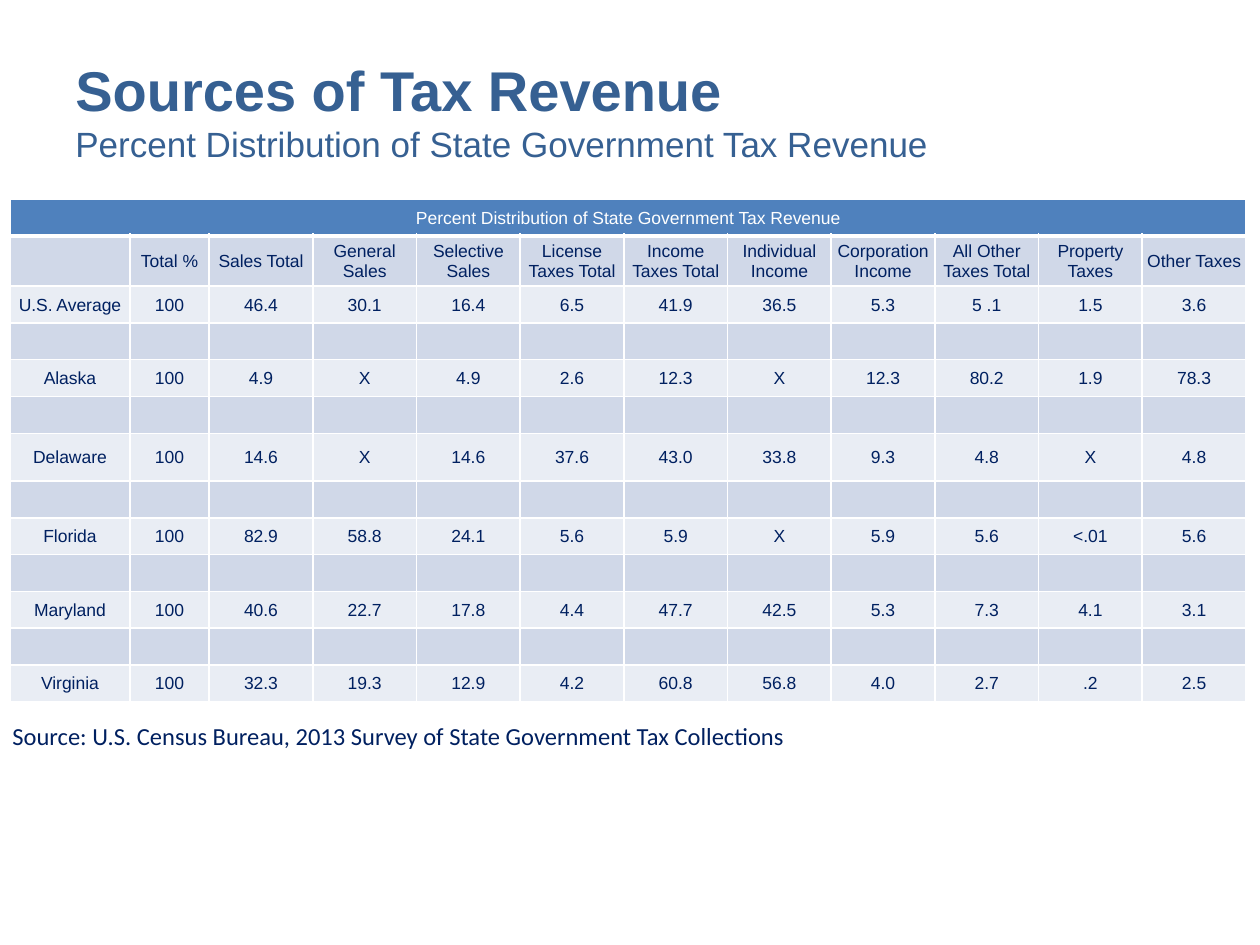
from lxml import etree
from pptx import Presentation
from pptx import util as u
from pptx.dml.color import RGBColor
from pptx.enum import text
from pptx.oxml import ns

WHITE = RGBColor(0xFF, 0xFF, 0xFF)
STEEL = RGBColor(0x36, 0x60, 0x92)
NAVY = RGBColor(0x00, 0x20, 0x60)
BANNER = RGBColor(0x4F, 0x81, 0xBD)
BAND = RGBColor(0xD0, 0xD8, 0xE8)
PALE = RGBColor(0xE9, 0xED, 0xF4)

SUBTITLE = "Percent Distribution of State Government Tax Revenue"
SOURCE = "Source: U.S. Census Bureau, 2013 Survey of State Government Tax Collections"
HEADINGS = ["", "Total %", "Sales Total", "General Sales", "Selective Sales",
            "License Taxes Total", "Income Taxes Total", "Individual Income",
            "Corporation Income", "All Other Taxes Total", "Property Taxes", "Other Taxes"]
STATES = [
    ["U.S. Average", "100", "46.4", "30.1", "16.4", "6.5", "41.9", "36.5", "5.3", "5 .1", "1.5", "3.6"],
    ["Alaska", "100", "4.9", "X", "4.9", "2.6", "12.3", "X", "12.3", "80.2", "1.9", "78.3"],
    ["Delaware", "100", "14.6", "X", "14.6", "37.6", "43.0", "33.8", "9.3", "4.8", "X", "4.8"],
    ["Florida", "100", "82.9", "58.8", "24.1", "5.6", "5.9", "X", "5.9", "5.6", "<.01", "5.6"],
    ["Maryland", "100", "40.6", "22.7", "17.8", "4.4", "47.7", "42.5", "5.3", "7.3", "4.1", "3.1"],
    ["Virginia", "100", "32.3", "19.3", "12.9", "4.2", "60.8", "56.8", "4.0", "2.7", ".2", "2.5"],
]


def set_all(target, values):
    for name, value in values.items():
        setattr(target, name, value)


def add_span(para, words, color, **values):
    span = para.add_run()
    span.text = words
    set_all(span.font, values)
    span.font.color.rgb = color


def add_text_box(page, box, anchor):
    frame = page.shapes.add_textbox(*map(u.Inches, box)).text_frame
    set_all(frame, {"word_wrap": True, "vertical_anchor": anchor})
    return frame.paragraphs[0]


def add_title(page, box):
    para = add_text_box(page, box, text.MSO_ANCHOR.MIDDLE)
    add_span(para, "Sources of Tax Revenue", STEEL, name="Arial", size=u.Pt(32), bold=True)
    para.add_line_break()
    add_span(para, SUBTITLE, STEEL, name="Arial", size=u.Pt(20), bold=False)


def add_source_note(page, box):
    para = add_text_box(page, box, text.MSO_ANCHOR.TOP)
    add_span(para, SOURCE, NAVY, name="Calibri", size=u.Pt(14))


def set_borders(cell, bottom):
    props = cell._tc.get_or_add_tcPr()
    for place, (side, width) in enumerate({"L": 1, "R": 1, "T": 1, "B": bottom}.items()):
        line = etree.Element(ns.qn(f"a:ln{side}"), w=str(u.Pt(width)))
        fill = etree.SubElement(line, ns.qn("a:solidFill"))
        etree.SubElement(fill, ns.qn("a:srgbClr"), val=str(WHITE))
        props.insert(place, line)


def fill_cell(cell, words, fill, color, bottom=1):
    set_all(cell, {"margin_left": u.Inches(0.01), "margin_right": u.Inches(0.01),
                   "margin_top": u.Inches(0.01), "margin_bottom": 0,
                   "vertical_anchor": text.MSO_ANCHOR.MIDDLE})
    cell.fill.solid()
    cell.fill.fore_color.rgb = fill
    set_borders(cell, bottom)
    para = cell.text_frame.paragraphs[0]
    para.alignment = text.PP_ALIGN.CENTER
    if words:
        add_span(para, words, color, name="Arial", size=u.Pt(10), bold=False)
    else:
        etree.SubElement(para._p, ns.qn("a:endParaRPr"), sz="1000")


def spread(total, count, fixed):
    rest = (total - sum(fixed.values())) / (count - len(fixed))
    return [u.Inches(fixed.get(index, rest)) for index in range(count)]


def add_revenue_table(page, box):
    blank = [""] * len(HEADINGS)
    rows = [[SUBTITLE] + blank[1:], HEADINGS, STATES[0]]
    for state in STATES[1:]:
        rows += [blank, state]
    table = page.shapes.add_table(len(rows), len(HEADINGS), *map(u.Inches, box)).table
    set_all(table, {"first_row": False, "horz_banding": False})
    for column, width in zip(table.columns, spread(box[2], len(HEADINGS), {0: 0.95, 1: 0.63})):
        column.width = width
    for row, height in zip(table.rows, spread(box[3], len(rows), {1: 0.4, 6: 0.38})):
        row.height = height
    table.cell(0, 0).merge(table.cell(0, len(HEADINGS) - 1))
    for index, (row, values) in enumerate(zip(table.rows, rows)):
        for cell, words in zip(row.cells, values):
            if index == 0:
                fill_cell(cell, words, BANNER, WHITE, bottom=3)
            else:
                fill_cell(cell, words, BAND if index % 2 else PALE, NAVY)


def main():
    deck = Presentation()
    set_all(deck, {"slide_width": u.Inches(10), "slide_height": u.Inches(7.5)})
    page = deck.slides.add_slide(deck.slide_layouts[6])
    add_title(page, (0.5, 0.25, 9, 1.25))
    add_source_note(page, (0, 5.67, 9.38, 0.34))
    add_revenue_table(page, (0.08, 1.58, 9.81, 3.99))
    deck.save("out.pptx")


if __name__ == "__main__":
    main()
